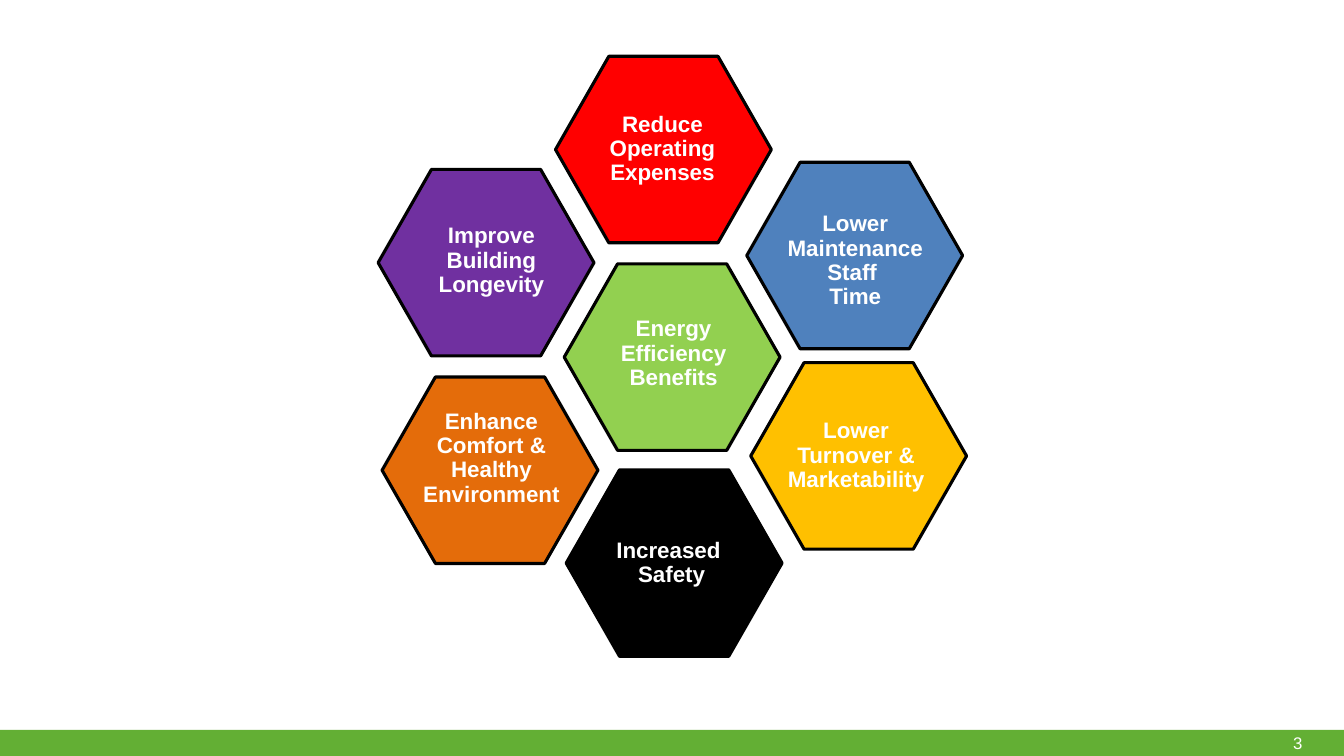
from dataclasses import dataclass

from pptx import Presentation
from pptx.dml.color import RGBColor
from pptx.enum.shapes import MSO_SHAPE
from pptx.enum.text import MSO_ANCHOR, PP_ALIGN
from pptx.shapes.autoshape import Shape
from pptx.slide import Slide
from pptx.util import Cm, Pt

WHITE = RGBColor(0xFF, 0xFF, 0xFF)
BLACK = RGBColor(0x00, 0x00, 0x00)
RED = RGBColor(0xFF, 0x00, 0x00)
BLUE = RGBColor(0x4F, 0x81, 0xBD)
AMBER = RGBColor(0xFF, 0xC0, 0x00)
ORANGE = RGBColor(0xE4, 0x6C, 0x0A)
PURPLE = RGBColor(0x70, 0x30, 0xA0)
LIGHT_GREEN = RGBColor(0x92, 0xD0, 0x50)
FOOTER_GREEN = RGBColor(0x63, 0xAF, 0x34)

FONT = "Arial"
PAGE_WIDTH, PAGE_HEIGHT = 33.87, 19.05
FOOTER_TOP, FOOTER_HEIGHT = 18.39, 0.66
HEXAGON_WIDTH, HEXAGON_HEIGHT = 5.44, 4.7
LABEL_WIDTH, LABEL_HEIGHT = 3.63, 3.15


@dataclass(frozen=True)
class Benefit:
    """A hexagon and its label; positions are in centimetres."""
    lines: tuple[str, ...]
    fill: RGBColor
    left: float
    top: float
    label_left: float
    label_top: float


BENEFITS = (
    Benefit(("Reduce Operating Expenses",), RED, 14.0, 1.42, 14.88, 2.18),
    Benefit(("Lower Maintenance Staff ", "Time"), BLUE, 18.82, 4.09, 19.74, 5.0),
    Benefit(("Lower", "Turnover & Marketability"), AMBER, 18.92, 9.14, 19.76, 9.91),
    Benefit(("Increased ", "Safety"), BLACK, 14.27, 11.84, 15.11, 12.62),
    Benefit(("Enhance Comfort & Healthy Environment",), ORANGE, 9.63, 9.5, 10.57, 9.98),
    Benefit(("Improve", "Building", "Longevity"), PURPLE, 9.53, 4.27, 10.57, 5.0),
    Benefit(("Energy", "Efficiency", "Benefits"), LIGHT_GREEN, 14.22, 6.65, 15.16, 7.34),
)


def add_filled_shape(page: Slide, kind: MSO_SHAPE, left: float, top: float,
                     width: float, height: float, fill: RGBColor) -> Shape:
    shape = page.shapes.add_shape(kind, Cm(left), Cm(top), Cm(width), Cm(height))
    shape.shadow.inherit = False
    shape.fill.solid()
    shape.fill.fore_color.rgb = fill
    return shape


def add_label(page: Slide, left: float, top: float, width: float, height: float,
              inset_x: float, inset_y: float, lines: tuple[str, ...], size: int,
              bold: bool, align: PP_ALIGN, line_spacing: float) -> None:
    """Add a white, vertically centred text box with one paragraph per line."""
    box = page.shapes.add_textbox(Cm(left), Cm(top), Cm(width), Cm(height))
    frame = box.text_frame
    frame.word_wrap = True
    frame.vertical_anchor = MSO_ANCHOR.MIDDLE
    frame.margin_left = frame.margin_right = Cm(inset_x)
    frame.margin_top = frame.margin_bottom = Cm(inset_y)
    for index, line in enumerate(lines):
        para = frame.add_paragraph() if index else frame.paragraphs[0]
        para.alignment = align
        para.line_spacing = line_spacing
        span = para.add_run()
        span.text = line
        span.font.name = FONT
        span.font.size = Pt(size)
        span.font.bold = bold
        span.font.color.rgb = WHITE


def add_footer(page: Slide) -> None:
    bar = add_filled_shape(page, MSO_SHAPE.RECTANGLE, 0, FOOTER_TOP,
                           PAGE_WIDTH, FOOTER_HEIGHT, FOOTER_GREEN)
    bar.line.fill.background()
    add_label(page, 32.26, FOOTER_TOP, 1.61, FOOTER_HEIGHT, 0.33, 0.18,
              ("3",), 12, False, PP_ALIGN.LEFT, 1.0)


def add_benefit(page: Slide, benefit: Benefit) -> None:
    hexagon = add_filled_shape(page, MSO_SHAPE.HEXAGON, benefit.left, benefit.top,
                               HEXAGON_WIDTH, HEXAGON_HEIGHT, benefit.fill)
    hexagon.adjustments[0] = 0.286
    hexagon.line.color.rgb = BLACK
    hexagon.line.width = Pt(2.25)
    add_label(page, benefit.label_left, benefit.label_top, LABEL_WIDTH, LABEL_HEIGHT,
              0.05, 0.05, benefit.lines, 16, True, PP_ALIGN.CENTER, 0.9)


def main() -> None:
    deck = Presentation()
    deck.slide_width = Cm(PAGE_WIDTH)
    deck.slide_height = Cm(PAGE_HEIGHT)
    page = deck.slides.add_slide(deck.slide_layouts[6])
    add_footer(page)
    for benefit in BENEFITS:
        add_benefit(page, benefit)
    deck.save("out.pptx")


if __name__ == "__main__":
    main()
